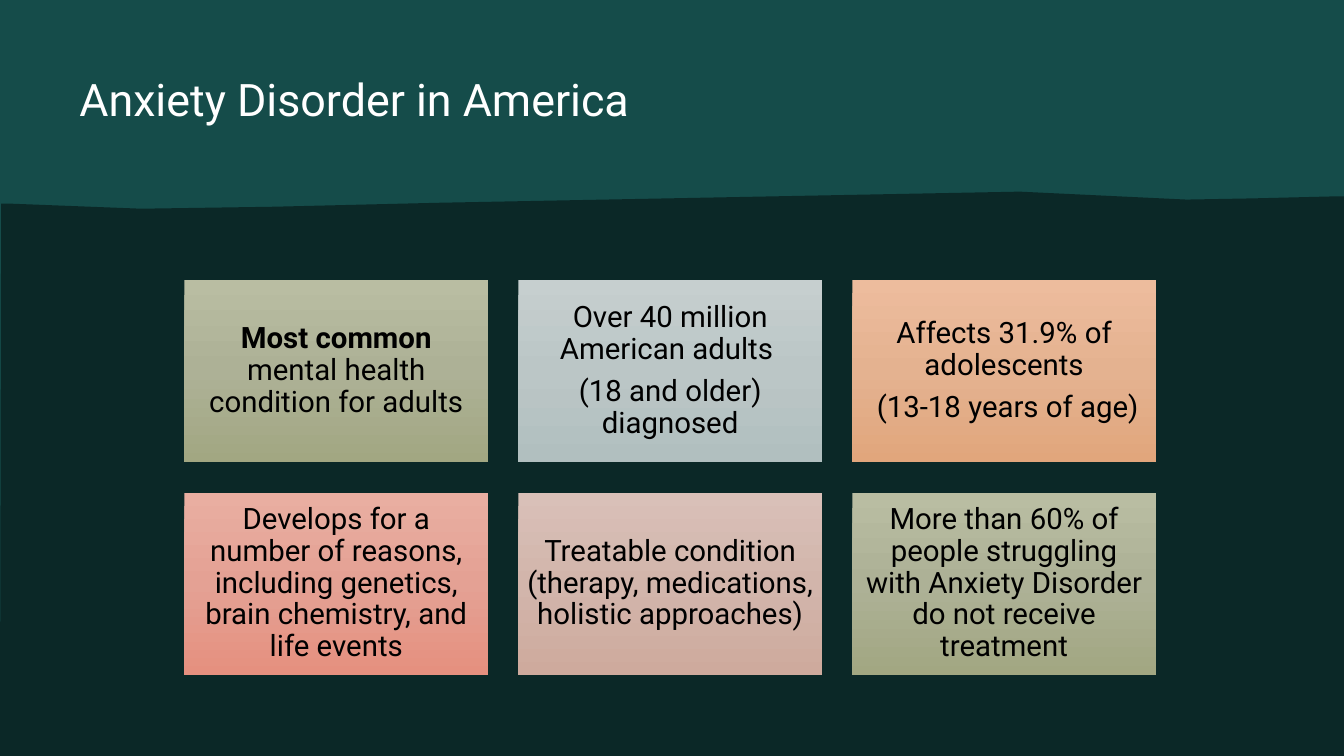
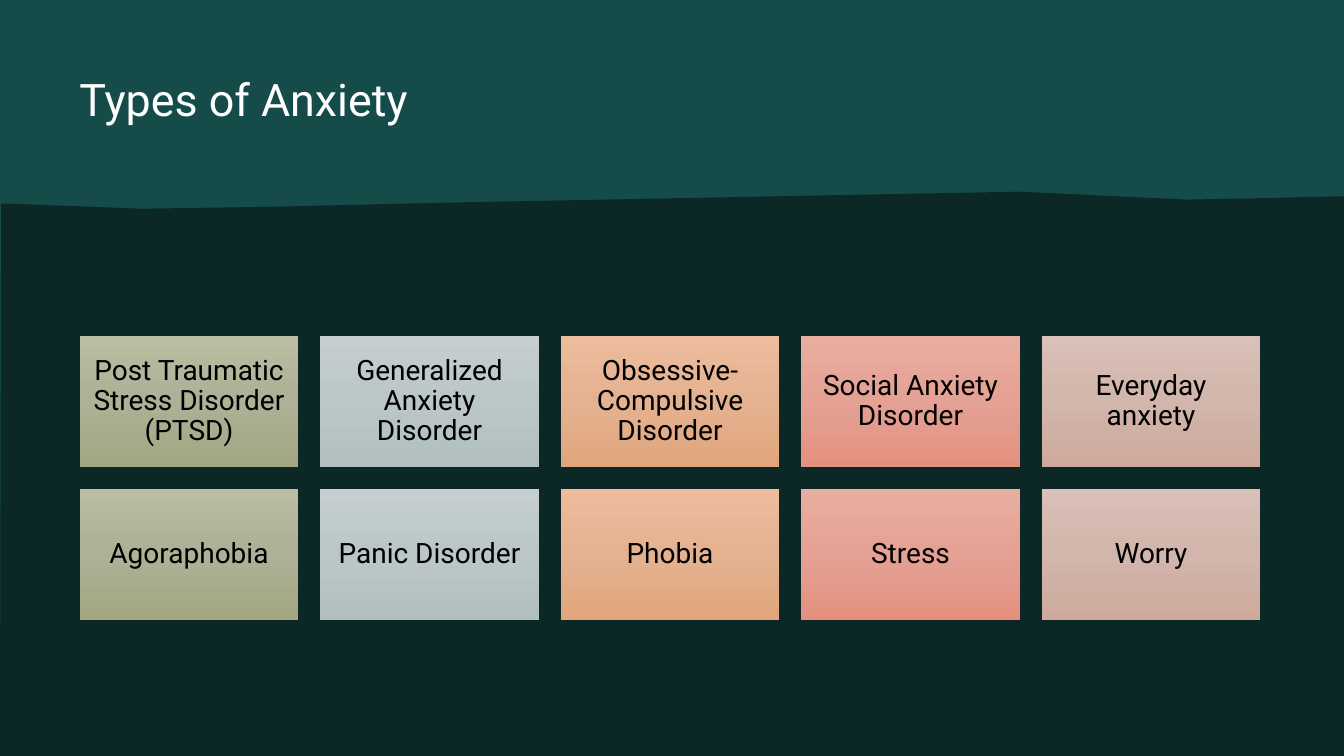
import copy

import pptx
import pptx.dml.color
import pptx.enum.shapes
import pptx.enum.text
import pptx.oxml.ns
import pptx.util

Cm = pptx.util.Cm
Pt = pptx.util.Pt

FONT = "Roboto"
DARK = "0B2827"
TEAL = "154C4A"
WHITE = "FFFFFF"
BLACK = "000000"
SLIDE_WIDTH = 33.87
SLIDE_HEIGHT = 19.05
CARD_RATIO = 0.6
GAP_RATIO = 0.1
CARD_INSET = 0.2

GRADIENTS = [
    ("B9BDA2", "ADB196", "A2A782"),
    ("C6CFCF", "BBC6C6", "B1BFBF"),
    ("EDBC9D", "E4B290", "E1A67C"),
    ("E9AEA1", "E4A194", "E5907F"),
    ("D9C0B8", "D2B5AB", "CEAA9D"),
]

RIDGE = [
    (0.03, 5.13), (0.2, 5.13), (3.56, 5.26), (6.91, 5.21), (11.07, 5.11),
    (25.7, 4.83), (29.9, 5.03), (31.57, 5), (33.6, 4.95), (SLIDE_WIDTH, 4.95),
    (SLIDE_WIDTH, SLIDE_HEIGHT), (0, SLIDE_HEIGHT),
]

FACTS = [
    [["Most common ", "mental health condition for adults"]],
    [["Over 40 million American adults "], ["(18 and older) diagnosed"]],
    [["Affects 31.9% of adolescents"], [" (13-18 years of age)"]],
    [["Develops for a number of reasons, including genetics, brain chemistry, and life events"]],
    [["Treatable condition (therapy, medications, holistic approaches)"]],
    [["More than 60% of people struggling with Anxiety Disorder do not receive treatment"]],
]

TYPES = [
    "Post Traumatic Stress Disorder (PTSD)",
    "Generalized Anxiety Disorder",
    "Obsessive-Compulsive Disorder",
    "Social Anxiety Disorder",
    "Everyday anxiety",
    "Agoraphobia",
    "Panic Disorder",
    "Phobia",
    "Stress",
    "Worry",
]


def color(value):
    return pptx.dml.color.RGBColor.from_string(value)


def clean(shape):
    shape.shadow.inherit = False
    shape.line.fill.background()


def fill_solid(shape, value):
    clean(shape)
    shape.fill.solid()
    shape.fill.fore_color.rgb = color(value)


def fill_gradient(shape, values):
    clean(shape)
    shape.fill.gradient()
    shape.fill.gradient_angle = 270
    stop_list = shape.element.spPr.find(".//" + pptx.oxml.ns.qn("a:gsLst"))
    stop_list.insert(1, copy.deepcopy(stop_list[0]))
    for index, (stop, value) in enumerate(zip(shape.fill.gradient_stops, values)):
        stop.position = index / 2
        stop.color.rgb = color(value)


def format_span(span, size, value, bold=False):
    span.font.name = FONT
    span.font.size = Pt(size)
    span.font.bold = bold
    span.font.color.rgb = color(value)


def set_insets(frame, inset):
    frame.word_wrap = True
    frame.margin_left = frame.margin_right = Cm(inset)
    frame.margin_top = frame.margin_bottom = Cm(inset)


def add_rectangle(page, left, top, width, height):
    return page.shapes.add_shape(
        pptx.enum.shapes.MSO_SHAPE.RECTANGLE, Cm(left), Cm(top), Cm(width), Cm(height))


def add_ridge(page):
    points = [(Cm(x), Cm(y)) for x, y in RIDGE]
    builder = page.shapes.build_freeform(*points[0])
    builder.add_line_segments(points[1:], close=True)
    fill_solid(builder.convert_to_shape(), DARK)


def add_title(page, title):
    box = page.shapes.add_textbox(Cm(2), Cm(1.8), Cm(29.8), Cm(1.9))
    set_insets(box.text_frame, 0)
    box.text_frame.text = title
    format_span(box.text_frame.paragraphs[0].runs[0], 32, WHITE)


def add_page(deck, title):
    page = deck.slides.add_slide(deck.slide_layouts[6])
    fill_solid(add_rectangle(page, 0, 0, SLIDE_WIDTH, SLIDE_HEIGHT), TEAL)
    add_ridge(page)
    add_title(page, title)
    return page


def add_card(page, left, top, width, paragraphs, size, gradient):
    card = add_rectangle(page, left, top, width, width * CARD_RATIO)
    fill_gradient(card, gradient)
    frame = card.text_frame
    set_insets(frame, CARD_INSET)
    frame.vertical_anchor = pptx.enum.text.MSO_ANCHOR.MIDDLE
    for index, texts in enumerate(paragraphs):
        para = frame.add_paragraph() if index else frame.paragraphs[0]
        para.alignment = pptx.enum.text.PP_ALIGN.CENTER
        para.line_spacing = 0.9
        para.space_after = Pt(size * 0.35)
        for text in texts:
            span = para.add_run()
            span.text = text
            format_span(span, size, BLACK, bold=len(texts) > 1 and text == texts[0])


def add_cards(page, left, top, width, columns, size, cards):
    gap = width * GAP_RATIO
    for index, paragraphs in enumerate(cards):
        row, column = divmod(index, columns)
        add_card(
            page,
            left + column * (width + gap),
            top + row * (width * CARD_RATIO + gap),
            width, paragraphs, size, GRADIENTS[index % len(GRADIENTS)])


def main():
    deck = pptx.Presentation()
    deck.slide_width = Cm(SLIDE_WIDTH)
    deck.slide_height = Cm(SLIDE_HEIGHT)
    background = deck.slide_master.background.fill
    background.solid()
    background.fore_color.rgb = color(DARK)

    page = add_page(deck, "Anxiety Disorder in America")
    add_cards(page, 4.65, 7.06, 7.65, 3, 21, FACTS)

    page = add_page(deck, "Types of Anxiety")
    add_cards(page, 2.01, 8.46, 5.51, 5, 20, [[[text]] for text in TYPES])

    deck.save("out.pptx")


if __name__ == "__main__":
    main()
